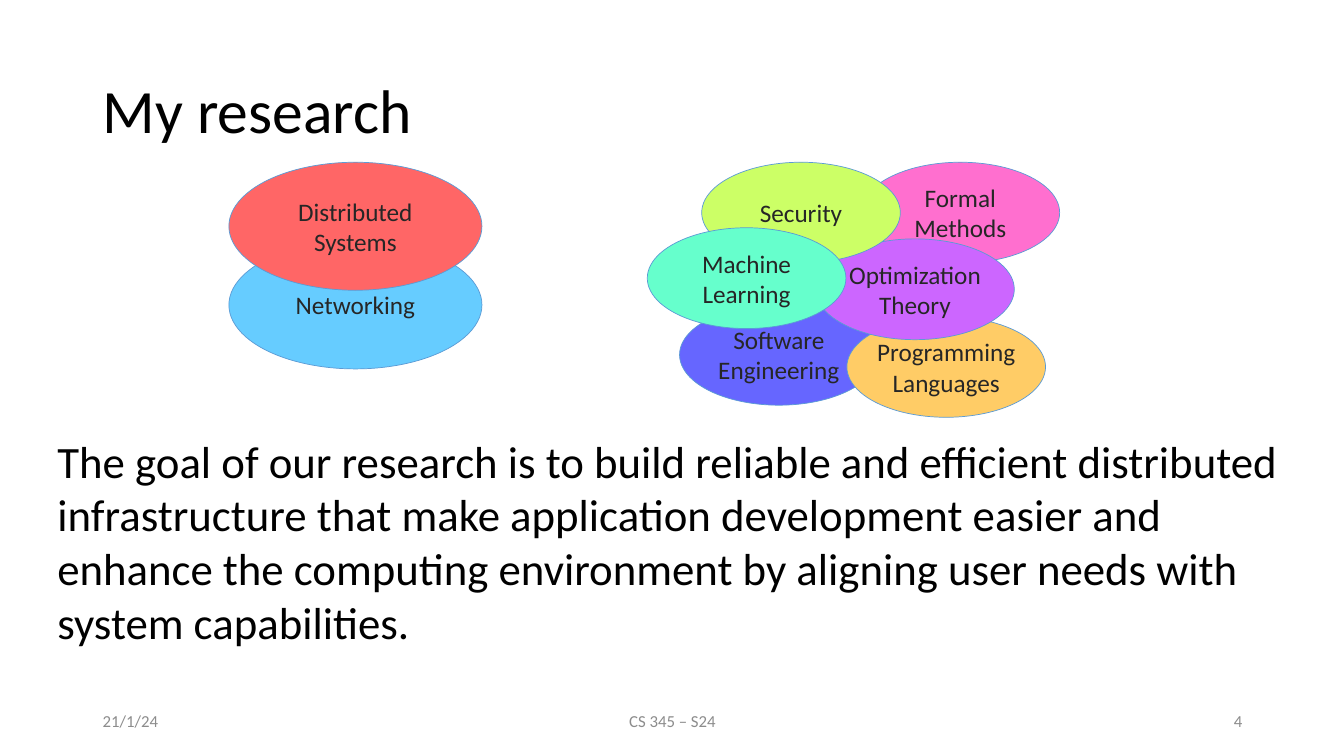
import pptx
import pptx.util
from pptx.dml.color import RGBColor
from pptx.enum.shapes import MSO_SHAPE
from pptx.enum.text import MSO_ANCHOR, PP_ALIGN

PX = 9144  # EMU per px, 100 px to the inch
FONT = "Calibri"

BLACK = RGBColor(0x00, 0x00, 0x00)
CHARCOAL = RGBColor(0x26, 0x26, 0x26)
GRAY = RGBColor(0x8C, 0x8C, 0x8C)
OUTLINE = RGBColor(0x5B, 0x9B, 0xD5)
INDIGO = RGBColor(0x66, 0x66, 0xFF)
SKY = RGBColor(0x66, 0xCC, 0xFF)
PINK = RGBColor(0xFF, 0x6F, 0xCF)
ORANGE = RGBColor(0xFF, 0xCC, 0x66)
PURPLE = RGBColor(0xCC, 0x66, 0xFF)
LIME = RGBColor(0xCC, 0xFF, 0x66)
MINT = RGBColor(0x66, 0xFF, 0xCC)
RED = RGBColor(0xFF, 0x66, 0x66)

CORE_SIZE = (251, 127)
AREA_SIZE = (197, 100)

# Back to front: name, left, top, size, fill
TOPICS = [
    ("Software Engineering", 674, 302, AREA_SIZE, INDIGO),
    ("Networking", 227, 239, CORE_SIZE, SKY),
    ("Formal Methods", 854, 161, AREA_SIZE, PINK),
    ("Programming Languages", 840, 314, AREA_SIZE, ORANGE),
    ("Optimization Theory", 809, 237, AREA_SIZE, PURPLE),
    ("Security", 696, 161, AREA_SIZE, LIME),
    ("Machine Learning", 642, 226, AREA_SIZE, MINT),
    ("Distributed Systems", 227, 161, CORE_SIZE, RED),
]

GOAL = (
    "The goal of our research is to build reliable and efficient distributed "
    "infrastructure that make application development easier and enhance the "
    "computing environment by aligning user needs with system capabilities."
)


def px(*lengths):
    return [pptx.util.Emu(length * PX) for length in lengths]


def set_all(target, values):
    for name, value in values.items():
        setattr(target, name, value)


def write(shape, text, size, color, align=PP_ALIGN.LEFT,
          anchor=MSO_ANCHOR.MIDDLE, side_inset=10, line_spacing=1.0):
    """Put one formatted paragraph into a shape or text box."""
    side, end = px(side_inset, 5)
    frame = shape.text_frame
    set_all(frame, {
        "word_wrap": True, "vertical_anchor": anchor,
        "margin_left": side, "margin_right": side,
        "margin_top": end, "margin_bottom": end,
    })
    para = frame.paragraphs[0]
    set_all(para, {"alignment": align, "line_spacing": line_spacing})
    span = para.add_run()
    span.text = text
    set_all(span.font, {"name": FONT, "size": pptx.util.Pt(size)})
    span.font.color.rgb = color


def add_text(page, text, place, size, color, **layout):
    box = page.shapes.add_textbox(*px(*place))
    write(box, text, size, color, **layout)


def add_topic(page, name, left, top, size, fill):
    oval = page.shapes.add_shape(MSO_SHAPE.OVAL, *px(left, top, *size))
    oval.shadow.inherit = False
    oval.fill.solid()
    oval.fill.fore_color.rgb = fill
    oval.line.color.rgb = OUTLINE
    oval.line.width = pptx.util.Pt(0.5)
    write(oval, name, 18, CHARCOAL, align=PP_ALIGN.CENTER, side_inset=0)


def add_footer(page):
    for text, left, width, align in [
        ("21/1/24", 92, 300, PP_ALIGN.LEFT),
        ("CS 345 – S24", 442, 450, PP_ALIGN.CENTER),
        ("4", 942, 300, PP_ALIGN.RIGHT),
    ]:
        add_text(page, text, (left, 695, width, 40), 12, GRAY, align=align)


def main():
    deck = pptx.Presentation()
    deck.slide_width, deck.slide_height = px(1333, 750)
    page = deck.slides.add_slide(deck.slide_layouts[6])

    add_text(page, "My research", (92, 40, 1150, 145), 44, BLACK, line_spacing=0.9)
    for topic in TOPICS:
        add_topic(page, *topic)
    add_text(page, GOAL, (47, 425, 1239, 226), 32, BLACK, anchor=MSO_ANCHOR.TOP)
    add_footer(page)

    deck.save("out.pptx")


if __name__ == "__main__":
    main()
